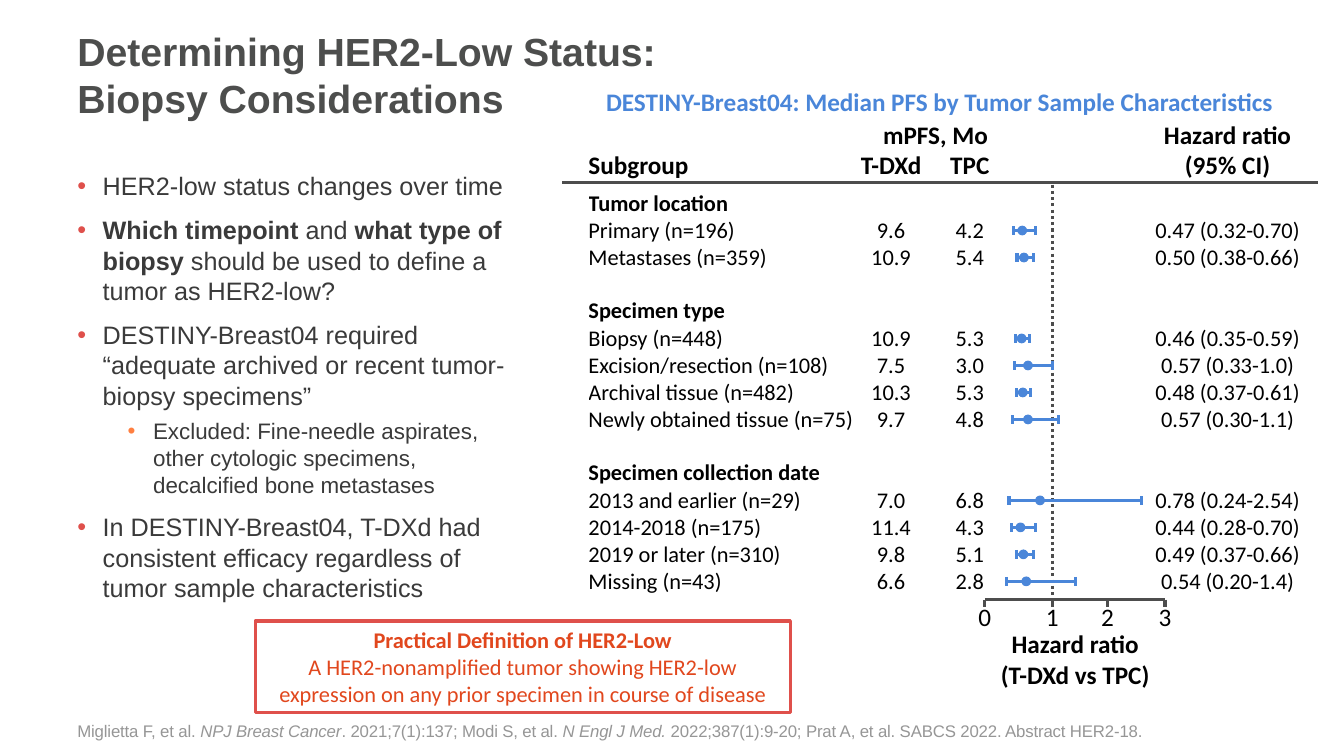
"""Build the slide on biopsy considerations for HER2-low status."""
from lxml.etree import SubElement
from pptx import Presentation
from pptx.dml.color import RGBColor
from pptx.enum.dml import MSO_LINE
from pptx.enum.shapes import MSO_CONNECTOR, MSO_SHAPE
from pptx.enum.text import MSO_ANCHOR, PP_ALIGN
from pptx.oxml.ns import qn
from pptx.util import Cm, Pt

AXIS, BLUE, RED = "4D4D4D", "4A86D9", "DF504B"
ORANGE, BODY = "E1471D", "3A3A3A"
CENTER = PP_ALIGN.CENTER


def write(paragraph, text, size=18, color="000000", font="Calibri",
          bold=False, italic=False, align=None):
    if align is not None:
        paragraph.alignment = align
    for number, part in enumerate(text.split("\v")):
        if number:
            paragraph.add_line_break()
            SubElement(paragraph._p[-1], qn("a:rPr"), sz=str(size * 100))
        run = paragraph.add_run()
        run.text = part
        run.font.size = Pt(size)
        run.font.name = font
        run.font.bold = bold
        run.font.italic = italic
        run.font.color.rgb = RGBColor.from_string(color)


def draw_line(shapes, x1, y1, x2, y2, color=AXIS):
    line = shapes.add_connector(MSO_CONNECTOR.STRAIGHT, Cm(x1), Cm(y1), Cm(x2), Cm(y2))
    line.line.color.rgb = RGBColor.from_string(color)
    line.line.width = Pt(2.25)
    SubElement(line._element.spPr, qn("a:effectLst"))
    return line


prs = Presentation()
prs.slide_width, prs.slide_height = Cm(33.87), Cm(19.05)
slide = prs.slides.add_slide(prs.slide_layouts[6])
shapes = slide.shapes

title = shapes.add_textbox(Cm(1.7), Cm(0.56), Cm(29.85), Cm(2.6)).text_frame
title.word_wrap = True
write(title.paragraphs[0], "Determining HER2-Low Status:\vBiopsy Considerations",
      size=28, color="4D4E4D", font="Arial", bold=True)

points = [
    (0, [("HER2-low status changes over time", False)]),
    (0, [("Which timepoint ", True), ("and ", False), ("what type of biopsy ", True),
         ("should be used to define a tumor as HER2-low?", False)]),
    (0, [("DESTINY-Breast04 required “adequate archived or recent "
          "tumor-biopsy specimens”", False)]),
    (1, [("Excluded: Fine-needle aspirates,\vother cytologic specimens,\v"
          "decalcified bone metastases", False)]),
    (0, [("In DESTINY-Breast04, T-DXd had consistent efficacy regardless of "
          "tumor sample characteristics", False)]),
]
considerations = shapes.add_textbox(Cm(1.7), Cm(4.17), Cm(11.81), Cm(13)).text_frame
considerations.word_wrap = True
for number, (level, parts) in enumerate(points):
    point = considerations.add_paragraph() if number else considerations.paragraphs[0]
    point.level = level
    if number:
        point.space_before = Pt(5 if level else 10)
    properties = point._p.get_or_add_pPr()
    properties.set("marL", str(Cm(1.91 if level else 0.64)))
    properties.set("indent", str(-Cm(0.64)))
    bullet_color = SubElement(properties, qn("a:buClr"))
    SubElement(bullet_color, qn("a:srgbClr"), val="FF7F40" if level else RED)
    SubElement(properties, qn("a:buFont"), typeface="Arial")
    SubElement(properties, qn("a:buChar"), char="•")
    for text, bold in parts:
        write(point, text, size=16 if level else 18, color=BODY, font="Arial", bold=bold)

subgroups = [
    ("Tumor location",),
    ("Primary (n=196)", "9.6", "4.2", "0.47 (0.32-0.70)"),
    ("Metastases (n=359)", "10.9", "5.4", "0.50 (0.38-0.66)"),
    ("Specimen type",),
    ("Biopsy (n=448)", "10.9", "5.3", "0.46 (0.35-0.59)"),
    ("Excision/resection (n=108)", "7.5", "3.0", "0.57 (0.33-1.0)"),
    ("Archival tissue (n=482)", "10.3", "5.3", "0.48 (0.37-0.61)"),
    ("Newly obtained tissue (n=75)", "9.7", "4.8", "0.57 (0.30-1.1)"),
    ("Specimen collection date",),
    ("2013 and earlier (n=29)", "7.0", "6.8", "0.78 (0.24-2.54)"),
    ("2014-2018 (n=175)", "11.4", "4.3", "0.44 (0.28-0.70)"),
    ("2019 or later (n=310)", "9.8", "5.1", "0.49 (0.37-0.66)"),
    ("Missing (n=43)", "6.6", "2.8", "0.54 (0.20-1.4)"),
]
column_widths = [6.76, 1.73, 2.24, 3.18, 4.39]
ROW = 0.68
row_heights = [0.77, 0.99] + [
    2 * ROW if number and len(entry) == 1 else ROW for number, entry in enumerate(subgroups)]
TABLE_TOP = 3.03
results = shapes.add_table(len(row_heights), len(column_widths), Cm(14.83), Cm(TABLE_TOP),
                           Cm(sum(column_widths)), Cm(sum(row_heights))).table
results.first_row = results.horz_banding = False
for column, width in zip(results.columns, column_widths):
    column.width = Cm(width)
for row, height in zip(results.rows, row_heights):
    row.height = Cm(height)
for cell in results.iter_cells():
    cell.fill.background()
    cell.margin_left = cell.margin_right = cell.margin_top = cell.margin_bottom = 0
    SubElement(cell.text_frame.paragraphs[0]._p, qn("a:endParaRPr"), sz="1600")

results.cell(0, 1).merge(results.cell(0, 2))
headings = [(1, 0, "Subgroup", None), (0, 1, "mPFS, Mo", CENTER), (1, 1, "T-DXd", CENTER),
            (1, 2, "TPC", CENTER), (0, 4, "Hazard ratio", CENTER), (1, 4, "(95% CI)", CENTER)]
for row, column, text, align in headings:
    write(results.cell(row, column).text_frame.paragraphs[0], text, bold=True, align=align)

for row, (label, *values) in enumerate(subgroups, 2):
    label_cell = results.cell(row, 0)
    if not values:
        label_cell.merge(results.cell(row, 4))
        label_cell.vertical_anchor = MSO_ANCHOR.BOTTOM
    write(label_cell.text_frame.paragraphs[0], label, size=16, bold=not values)
    for column, value in zip((1, 2, 4), values):
        write(results.cell(row, column).text_frame.paragraphs[0], value, size=16, align=CENTER)

AXIS_Y = 15.11
ticks = [24.82, 26.52, 27.91, 29.36]
draw_line(shapes, 14.17, 4.6, 33.22, 4.6)
draw_line(shapes, ticks[1], 4.65, ticks[1], 15.16).line.dash_style = MSO_LINE.ROUND_DOT
draw_line(shapes, ticks[0], AXIS_Y, ticks[-1], AXIS_Y)
for x in ticks:
    draw_line(shapes, x, AXIS_Y, x, AXIS_Y + 0.18)

CAP = 0.11
for row, (label, *values) in enumerate(subgroups, 2):
    if not values:
        continue
    y = TABLE_TOP + sum(row_heights[:row]) + ROW / 2
    ratio, interval = values[-1].strip(")").split(" (")
    low, middle, high = [25.08 + 1.45 * float(v)
                         for v in (interval.split("-")[0], ratio, interval.split("-")[1])]
    estimate = shapes.add_group_shape().shapes
    draw_line(estimate, low, y, high, y, BLUE)
    for end in (low, high):
        draw_line(estimate, end, y - CAP, end, y + CAP, BLUE)
    dot = estimate.add_shape(MSO_SHAPE.OVAL, Cm(middle - CAP), Cm(y - CAP),
                             Cm(2 * CAP), Cm(2 * CAP))
    dot.shadow.inherit = False
    dot.fill.solid()
    dot.fill.fore_color.rgb = RGBColor.from_string(BLUE)
    dot.line.color.rgb = RGBColor.from_string(BLUE)

captions = [
    (14.17, 2.06, 19.02, 1.02, "DESTINY-Breast04: Median PFS by Tumor Sample Characteristics",
     BLUE, True),
    (24.1, 15.72, 5.99, 1.8, "Hazard ratio\v(T-DXd vs TPC)", "000000", True),
] + [(x - 0.46, 15.04, 0.92, 1.02, str(value), "000000", False)
     for value, x in enumerate(ticks)]
for left, top, width, height, text, color, bold in captions:
    caption = shapes.add_textbox(Cm(left), Cm(top), Cm(width), Cm(height)).text_frame
    caption.word_wrap = True
    write(caption.paragraphs[0], text, color=color, bold=bold, align=CENTER)

definition = shapes.add_shape(MSO_SHAPE.RECTANGLE, Cm(6.43), Cm(15.65), Cm(13.49), Cm(2.31))
definition.shadow.inherit = False
definition.fill.background()
definition.line.color.rgb = RGBColor.from_string(RED)
definition.line.width = Pt(2.25)
wording = definition.text_frame
wording.word_wrap = True
write(wording.paragraphs[0], "Practical Definition of HER2-Low", size=16, color=ORANGE,
      bold=True, align=CENTER)
write(wording.add_paragraph(), "A HER2-nonamplified tumor showing HER2-low expression "
      "on any prior specimen in course of disease", size=16, color=ORANGE, align=CENTER)

references = shapes.add_textbox(Cm(1.7), Cm(18.03), Cm(29.85), Cm(1)).text_frame
references.word_wrap = True
for text, italic in [
    ("Miglietta F, et al. ", False), ("NPJ Breast Cancer", True),
    (". 2021;7(1):137; Modi S, et al. ", False), ("N Engl J Med. ", True),
    ("2022;387(1):9-20; Prat A, et al. SABCS 2022. Abstract HER2-18.", False),
]:
    write(references.paragraphs[0], text, size=12, color="969696", font="Arial", italic=italic)
for run in references.paragraphs[0].runs:
    run._r.get_or_add_rPr().set("spc", "-10")

prs.save("out.pptx")
